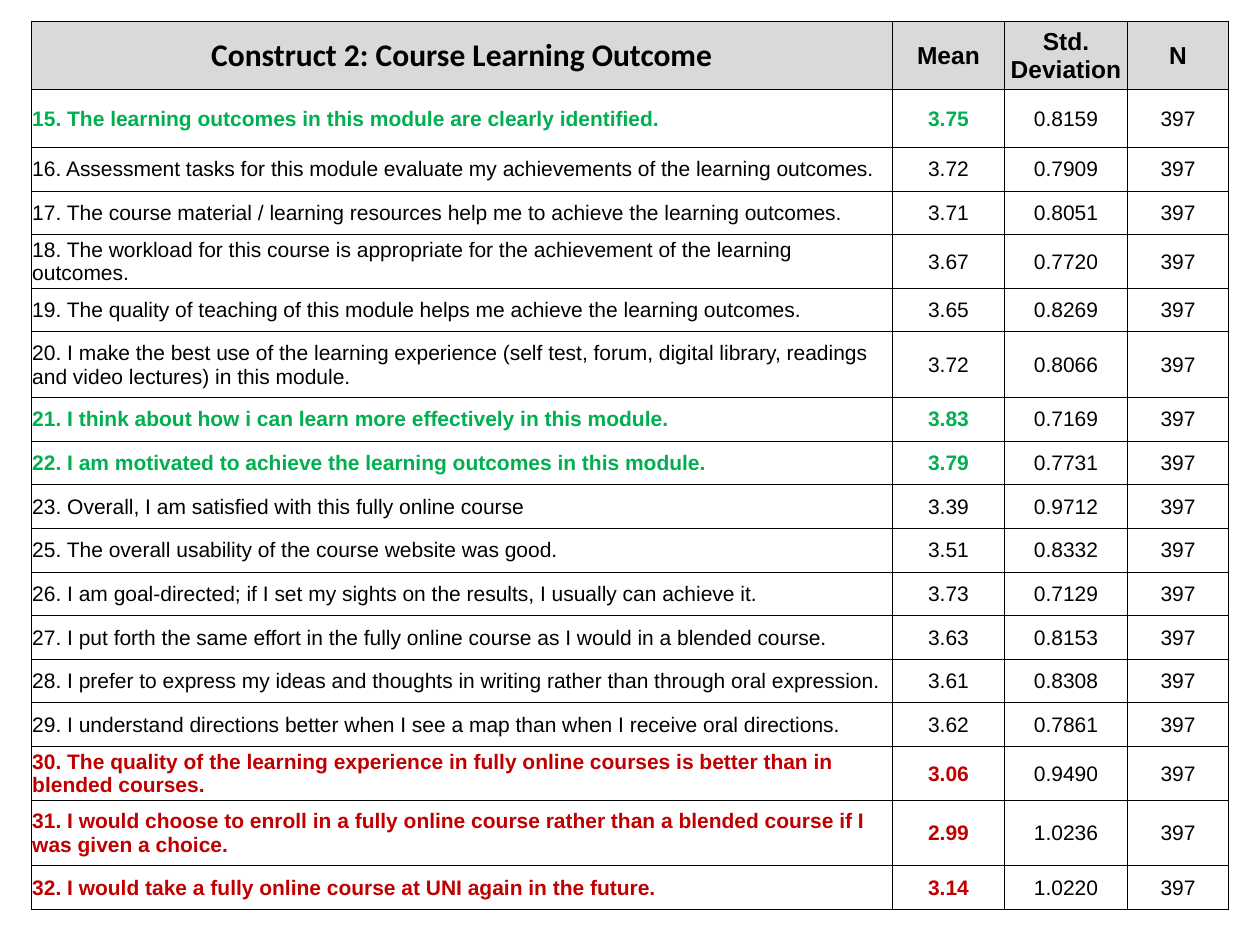
"""Builds a one-slide survey table of course learning outcome scores."""
from lxml import etree
from pptx import Presentation
from pptx import util as u
from pptx.dml.color import RGBColor
from pptx.enum import text
from pptx.oxml.ns import qn

BLACK = RGBColor(0x00, 0x00, 0x00)
GREEN = RGBColor(0x00, 0xB0, 0x50)
RED = RGBColor(0xC0, 0x00, 0x00)
GREY = RGBColor(0xD9, 0xD9, 0xD9)

COLUMN_WIDTHS = (17.36, 2.26, 2.48, 2.04)
HEADER, LEAD, SINGLE, TIGHT, DOUBLE = 1.38, 1.16, 0.88, 1.08, 1.32
RESPONDENTS = "397"
HEADINGS = ("Construct 2: Course Learning Outcome", "Mean", "Std. Deviation", "N")

ITEMS = (
    ("15. The learning outcomes in this module are clearly identified.", "3.75", "0.8159", LEAD, GREEN),
    ("16. Assessment tasks for this module evaluate my achievements of the learning outcomes.",
     "3.72", "0.7909", SINGLE, BLACK),
    ("17. The course material / learning resources help me to achieve the learning outcomes.",
     "3.71", "0.8051", SINGLE, BLACK),
    ("18. The workload for this course is appropriate for the achievement of the learning outcomes.",
     "3.67", "0.7720", TIGHT, BLACK),
    ("19. The quality of teaching of this module helps me achieve the learning outcomes.",
     "3.65", "0.8269", SINGLE, BLACK),
    ("20. I make the best use of the learning experience (self test, forum, digital library, "
     "readings and video lectures) in this module.", "3.72", "0.8066", DOUBLE, BLACK),
    ("21. I think about how i can learn more effectively in this module.", "3.83", "0.7169", SINGLE, GREEN),
    ("22. I am motivated to achieve the learning outcomes in this module.", "3.79", "0.7731", SINGLE, GREEN),
    ("23. Overall, I am satisfied with this fully online course", "3.39", "0.9712", SINGLE, BLACK),
    ("25. The overall usability of the course website was good.", "3.51", "0.8332", SINGLE, BLACK),
    ("26. I am goal-directed; if I set my sights on the results, I usually can achieve it.",
     "3.73", "0.7129", SINGLE, BLACK),
    ("27. I put forth the same effort in the fully online course as I would in a blended course.",
     "3.63", "0.8153", SINGLE, BLACK),
    ("28. I prefer to express my ideas and thoughts in writing rather than through oral expression.",
     "3.61", "0.8308", SINGLE, BLACK),
    ("29. I understand directions better when I see a map than when I receive oral directions.",
     "3.62", "0.7861", SINGLE, BLACK),
    ("30. The quality of the learning experience in fully online courses is better than in blended courses.",
     "3.06", "0.9490", TIGHT, RED),
    ("31. I would choose to enroll in a fully online course rather than a blended course "
     "if I was given a choice.", "2.99", "1.0236", DOUBLE, RED),
    ("32. I would take a fully online course at UNI again in the future.", "3.14", "1.0220", SINGLE, RED),
)


def write(frame, words, size=12, font="Arial", color=BLACK, bold=False, align=text.PP_ALIGN.CENTER):
    """Put formatted words into a text frame."""
    paragraph = frame.paragraphs[0]
    paragraph.alignment = align
    run = paragraph.add_run()
    run.text = words
    run.font.size = u.Pt(size)
    run.font.name = font
    run.font.bold = bold
    run.font.color.rgb = color


class SurveySlide:
    """Holds the table style and the current slide."""

    inset = u.Cm(0.02)
    border_width = u.Pt(0.5)
    border_color = BLACK

    def __init__(self, slide):
        self.slide = slide

    def table(self, left, top, widths, heights):
        """Add an unbanded table with the given column widths and row heights in cm."""
        grid = self.slide.shapes.add_table(
            len(heights), len(widths), u.Cm(left), u.Cm(top), u.Cm(sum(widths)), u.Cm(sum(heights))).table
        grid.first_row = grid.horz_banding = False
        for column, width in zip(grid.columns, widths):
            column.width = u.Cm(width)
        for row, height in zip(grid.rows, heights):
            row.height = u.Cm(height)
        return grid

    def cell(self, cell, words, fill=None, **style):
        """Fill, border and write one table cell."""
        cell.margin_left = cell.margin_right = cell.margin_top = self.inset
        cell.margin_bottom = 0
        cell.vertical_anchor = text.MSO_ANCHOR.MIDDLE
        self.borders(cell)
        if fill is None:
            cell.fill.background()
        else:
            cell.fill.solid()
            cell.fill.fore_color.rgb = fill
        write(cell.text_frame, words, **style)

    def borders(self, cell):
        """Draw a solid line on all four sides of a cell."""
        properties = cell._tc.get_or_add_tcPr()
        for side in ("a:lnL", "a:lnR", "a:lnT", "a:lnB"):
            line = etree.SubElement(properties, qn(side), w=str(self.border_width))
            solid = etree.SubElement(line, qn("a:solidFill"))
            etree.SubElement(solid, qn("a:srgbClr"), val=str(self.border_color))


def main():
    """Build and save the slide."""
    deck = Presentation()
    deck.slide_width, deck.slide_height = u.Cm(25.4), u.Cm(19.05)
    survey = SurveySlide(deck.slides.add_slide(deck.slide_layouts[6]))
    heights = [HEADER] + [item[3] for item in ITEMS]
    scores = survey.table(0.63, 0.43, COLUMN_WIDTHS, heights)

    for column, heading in enumerate(HEADINGS):
        style = {"size": 14} if column else {"size": 18, "font": "Calibri"}
        survey.cell(scores.cell(0, column), heading, fill=GREY, bold=True, **style)

    for row, (statement, mean, deviation, _, color) in enumerate(ITEMS, start=1):
        emphasis = {"color": color, "bold": color != BLACK}
        survey.cell(scores.cell(row, 0), statement, align=text.PP_ALIGN.LEFT, **emphasis)
        survey.cell(scores.cell(row, 1), mean, **emphasis)
        survey.cell(scores.cell(row, 2), deviation)
        survey.cell(scores.cell(row, 3), RESPONDENTS)

    deck.save("out.pptx")


if __name__ == "__main__":
    main()
